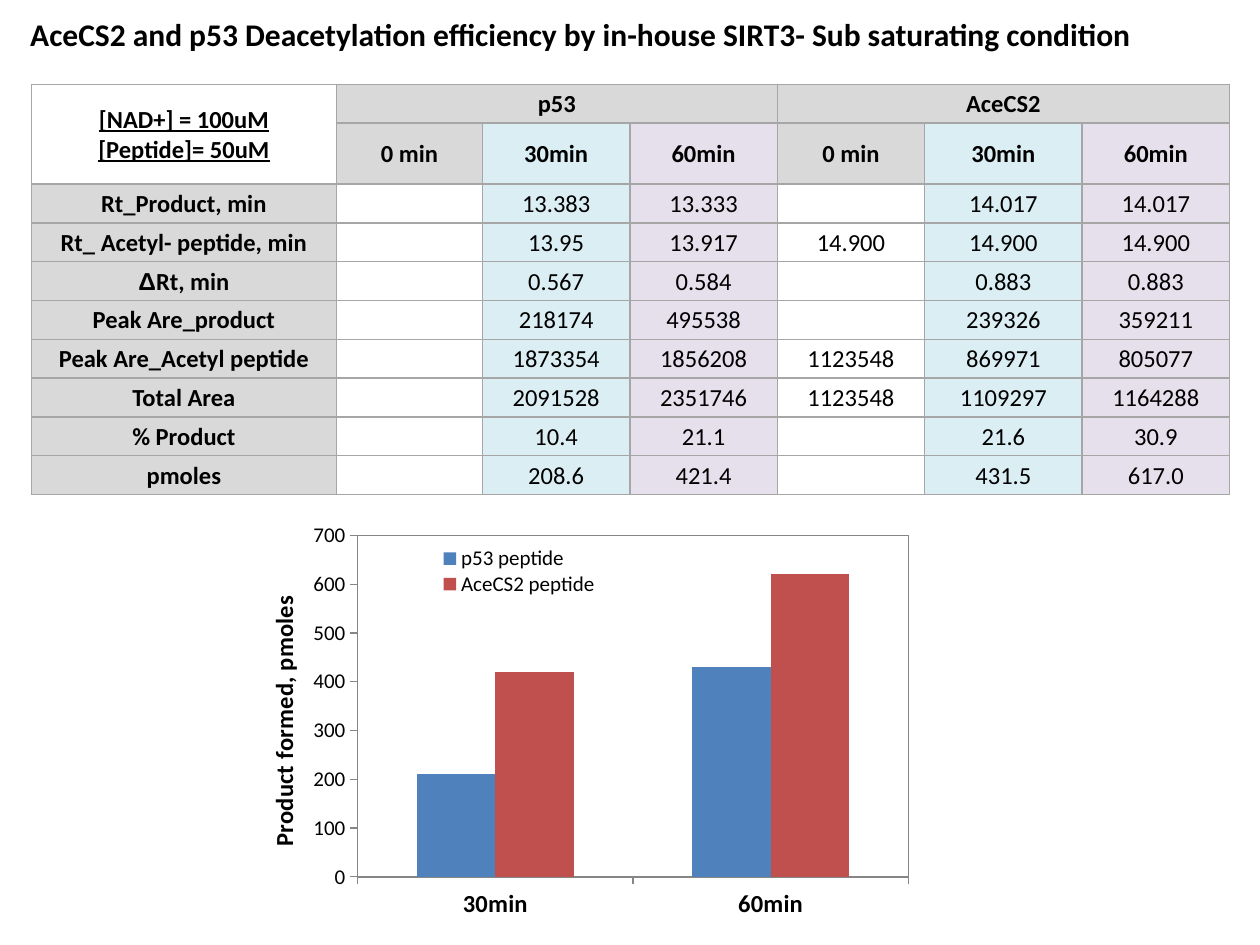
from lxml import etree
from pptx import Presentation
from pptx.chart.data import CategoryChartData
from pptx.dml.color import RGBColor
from pptx.enum.chart import XL_CHART_TYPE, XL_LEGEND_POSITION, XL_TICK_MARK
from pptx.enum.text import MSO_ANCHOR, MSO_AUTO_SIZE, PP_ALIGN
from pptx.oxml import parse_xml
from pptx.oxml.ns import nsdecls, qn
from pptx.util import Inches, Pt

COLORS = {
    "text": "000000", "header": "D9D9D9", "min30": "DBEEF4", "min60": "E6E0EC",
    "border": "A6A6A6", "axis": "868686", "p53": "4F81BD", "acecs2": "C0504D",
}
FONT = "Calibri"

COLUMN_WIDTHS = [2.42, 1.16, 1.17, 1.17, 1.17, 1.25, 1.17]
TIME_FILLS = ["header", "min30", "min60"]
ROWS = [
    ["[NAD+] = 100uM\n[Peptide]= 50uM", "p53", "", "", "AceCS2", "", ""],
    ["", "0 min", "30min", "60min", "0 min", "30min", "60min"],
    ["Rt_Product, min", "", "13.383", "13.333", "", "14.017", "14.017"],
    ["Rt_ Acetyl- peptide, min", "", "13.95", "13.917", "14.900", "14.900", "14.900"],
    ["ΔRt, min", "", "0.567", "0.584", "", "0.883", "0.883"],
    ["Peak Are_product", "", "218174", "495538", "", "239326", "359211"],
    ["Peak Are_Acetyl peptide", "", "1873354", "1856208", "1123548", "869971", "805077"],
    ["Total Area", "", "2091528", "2351746", "1123548", "1109297", "1164288"],
    ["% Product", "", "10.4", "21.1", "", "21.6", "30.9"],
    ["pmoles", "", "208.6", "421.4", "", "431.5", "617.0"],
]


def rgb(name):
    return RGBColor.from_string(COLORS[name])


def style_font(font, size, bold=False):
    font.name = FONT
    font.size = Pt(size)
    font.bold = bold
    font.color.rgb = rgb("text")


def add_title(slide, left, top, width, height):
    title = slide.shapes.title
    title.left, title.top = Inches(left), Inches(top)
    title.width, title.height = Inches(width), Inches(height)
    frame = title.text_frame
    frame.text = "AceCS2 and p53 Deacetylation efficiency by in-house SIRT3- Sub saturating condition"
    frame.word_wrap = False
    frame.auto_size = MSO_AUTO_SIZE.NONE
    frame.margin_left = frame.margin_right = 0
    frame.paragraphs[0].alignment = PP_ALIGN.CENTER
    style_font(frame.paragraphs[0].font, 18, True)


def cell_fill(row, column):
    """Headers are grey; the time columns keep their own tint downwards."""
    if column == 0:
        return "header" if row > 1 else None
    if row == 0:
        return "header"
    time = (column - 1) % 3
    return TIME_FILLS[time] if time or row == 1 else None


def add_borders(cell):
    properties = cell._tc.get_or_add_tcPr()
    for position, side in enumerate(("lnL", "lnR", "lnT", "lnB")):
        properties.insert(position, parse_xml(
            f'<a:{side} {nsdecls("a")} w="12700"><a:solidFill>'
            f'<a:srgbClr val="{COLORS["border"]}"/></a:solidFill></a:{side}>'))


def style_cell(cell, row, column):
    cell.vertical_anchor = MSO_ANCHOR.MIDDLE
    cell.margin_left = cell.margin_right = cell.margin_top = Inches(0.01)
    cell.margin_bottom = 0
    fill = cell_fill(row, column)
    if fill:
        cell.fill.solid()
        cell.fill.fore_color.rgb = rgb(fill)
    else:
        cell.fill.background()
    add_borders(cell)
    for paragraph in cell.text_frame.paragraphs:
        paragraph.alignment = PP_ALIGN.CENTER
        style_font(paragraph.font, 14, row < 2 or column == 0)
        paragraph.font.underline = (row, column) == (0, 0)


def add_results_table(slide, left, top, height):
    table = slide.shapes.add_table(
        len(ROWS), len(COLUMN_WIDTHS), Inches(left), Inches(top),
        Inches(sum(COLUMN_WIDTHS)), Inches(height)).table
    table.first_row = table.horz_banding = False
    for column, width in zip(table.columns, COLUMN_WIDTHS):
        column.width = Inches(width)
    for r, values in enumerate(ROWS):
        table.rows[r].height = Inches(height / len(ROWS))
        for c, value in enumerate(values):
            cell = table.cell(r, c)
            if value.startswith("Δ"):
                paragraph = cell.text_frame.paragraphs[0]
                delta = paragraph.add_run()
                delta.text, delta.font.name = value[0], "Arial"
                paragraph.add_run().text = value[1:]
            else:
                cell.text = value
            style_cell(cell, r, c)
    # Condition cell and the two peptide headers
    for start, end in (((0, 0), (1, 0)), ((0, 1), (0, 3)), ((0, 4), (0, 6))):
        table.cell(*start).merge(table.cell(*end))


def manual_layout(box, chart_size, inner=False):
    """Turn a box in inches into a layout in fractions of the chart."""
    target = '<c:layoutTarget val="inner"/>' if inner else ""
    x, y, w, h = (length / chart_size[i % 2] for i, length in enumerate(box))
    return parse_xml(
        f'<c:layout {nsdecls("c")}><c:manualLayout>{target}'
        '<c:xMode val="edge"/><c:yMode val="edge"/>'
        f'<c:x val="{x}"/><c:y val="{y}"/><c:w val="{w}"/><c:h val="{h}"/>'
        '</c:manualLayout></c:layout>')


def remove_layout(element):
    for layout in element.findall(qn("c:layout")):
        element.remove(layout)


def style_axis(axis, size, bold=False):
    axis.has_major_gridlines = False
    axis.major_tick_mark = XL_TICK_MARK.OUTSIDE
    axis.minor_tick_mark = XL_TICK_MARK.NONE
    axis.format.line.color.rgb = rgb("axis")
    axis.format.line.width = Pt(0.75)
    style_font(axis.tick_labels.font, size, bold)


def add_product_chart(slide, left, top, width, height):
    data = CategoryChartData()
    data.categories = ["30min", "60min"]
    data.add_series("p53 peptide", [210, 430])
    data.add_series("AceCS2 peptide", [420, 620])
    chart = slide.shapes.add_chart(
        XL_CHART_TYPE.COLUMN_CLUSTERED, Inches(left), Inches(top),
        Inches(width), Inches(height), data).chart
    chart.has_title = False
    style_font(chart.font, 10)

    # Bars
    plot = chart.plots[0]
    plot.gap_width, plot.overlap = 150, 0
    plot.vary_by_categories = False
    for series, color in zip(plot.series, ("p53", "acecs2")):
        series.format.fill.solid()
        series.format.fill.fore_color.rgb = rgb(color)

    # Axes
    style_axis(chart.category_axis, 14, True)
    amount = chart.value_axis
    style_axis(amount, 12)
    amount.minimum_scale, amount.maximum_scale, amount.major_unit = 0, 700, 100
    amount.tick_labels.number_format = "0"
    amount.tick_labels.number_format_is_linked = False
    caption = amount.axis_title.text_frame
    caption.text = "Product formed, pmoles"
    style_font(caption.paragraphs[0].font, 14, True)

    # Legend inside the framed plot area
    chart.has_legend = True
    legend = chart.legend
    legend.position = XL_LEGEND_POSITION.RIGHT
    legend.include_in_layout = False
    style_font(legend.font, 12)
    remove_layout(legend._element)
    legend._element.find(qn("c:legendPos")).addnext(
        manual_layout((1.36, 0.25, 1.36, 0.41), (width, height)))
    plot_area = chart._chartSpace.chart.plotArea
    remove_layout(plot_area)
    plot_area.insert(0, manual_layout((0.76, 0.17, 4.37, 2.71), (width, height), inner=True))
    frame = etree.SubElement(plot_area, qn("c:spPr"))
    frame.append(parse_xml(f'<a:noFill {nsdecls("a")}/>'))
    frame.append(parse_xml(
        f'<a:ln {nsdecls("a")} w="9525"><a:solidFill>'
        f'<a:srgbClr val="{COLORS["axis"]}"/></a:solidFill></a:ln>'))


def main():
    deck = Presentation()
    deck.slide_width, deck.slide_height = Inches(10), Inches(7.5)
    slide = deck.slides.add_slide(deck.slide_layouts[5])
    add_title(slide, 0.14, 0.07, 8.94, 0.4)
    add_results_table(slide, 0.25, 0.67, 3.08)
    add_product_chart(slide, 2.08, 4.08, 5.25, 3.25)
    deck.save("out.pptx")


if __name__ == "__main__":
    main()
